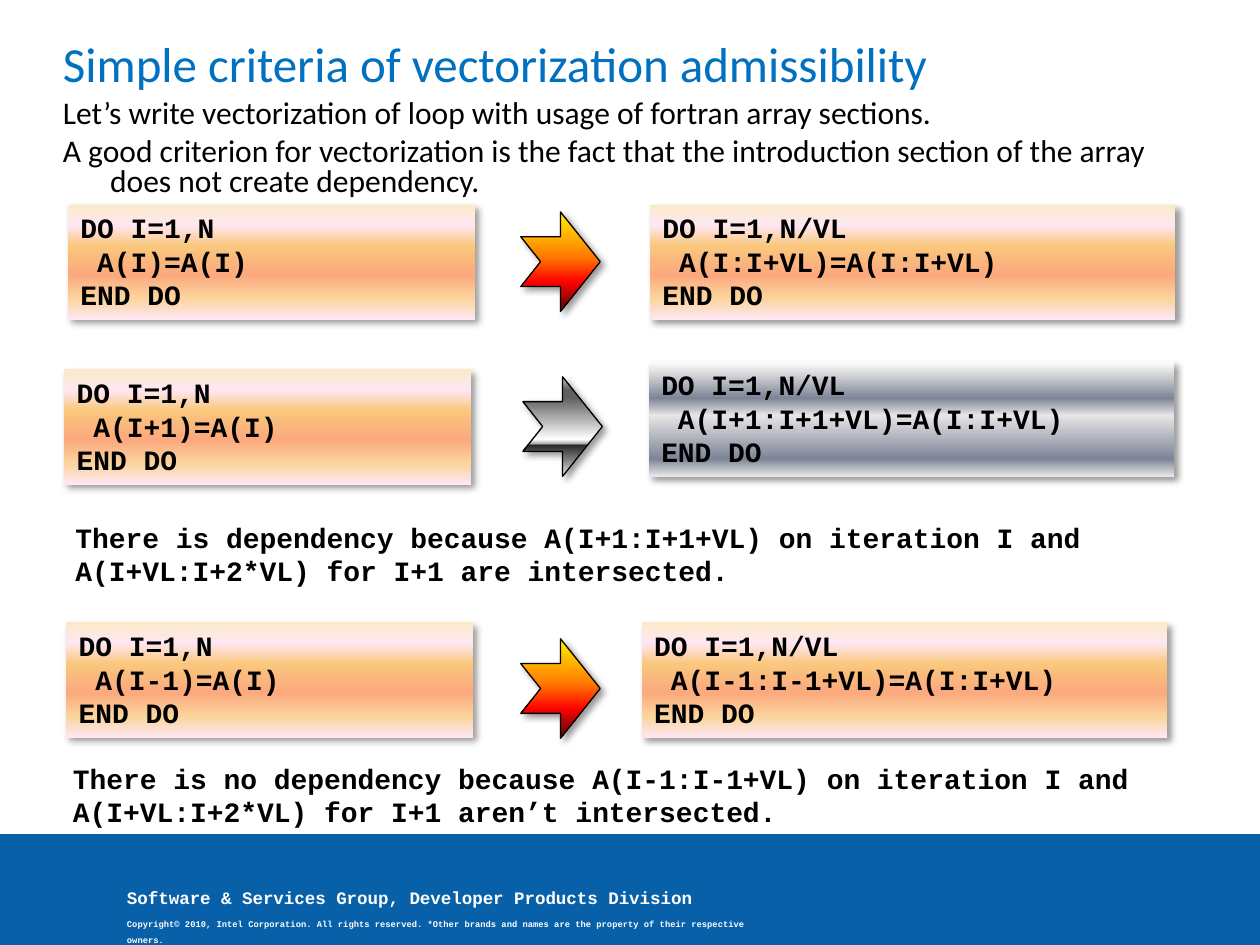
import pptx
import pptx.util
import pptx.dml.color
import pptx.enum.shapes
import pptx.enum.text
import pptx.oxml
import pptx.oxml.ns
import lxml.etree
from dataclasses import dataclass

Pt = pptx.util.Pt
RGBColor = pptx.dml.color.RGBColor
Shapes = pptx.enum.shapes.MSO_SHAPE


@dataclass(frozen=True)
class Theme:
    title_color: str = "0070C0"
    ink: str = "000000"
    light: str = "FFFFFF"
    band: str = "0860A8"
    sans: str = "Calibri"
    mono: str = "Courier New"
    title_size: int = 28
    body_size: int = 18
    code_size: int = 16
    code_leading: float = 19.2
    footer_size: int = 10
    copyright_size: int = 5
    peach: tuple = ((0, "FBEAC7"), (18, "FEE7F2"), (36, "FAC77D"),
                    (61, "FBA97D"), (82, "FBD49C"), (100, "FEE7F2"))
    fire: tuple = ((0, "FFF200"), (45, "FF7A00"), (70, "FF0300"), (100, "4D0808"))
    chrome: tuple = ((0, "CBCBCB"), (13, "5F5F5F"), (21, "5F5F5F"), (63, "FFFFFF"),
                     (67, "B2B2B2"), (69, "292929"), (82, "777777"), (100, "EAEAEA"))
    steel: tuple = ((0, "FFFFFF"), (7, "E6E6E6"), (32, "7D8496"),
                    (47, "E6E6E6"), (85, "7D8496"), (100, "E6E6E6"))


THEME = Theme()
SHADOW = (
    f'<a:outerShdw {pptx.oxml.ns.nsdecls("a")} blurRad="{Pt(4)}" dist="{Pt(3)}" '
    'dir="2700000" algn="tl" rotWithShape="0"><a:srgbClr val="000000">'
    '<a:alpha val="40000"/></a:srgbClr></a:outerShdw>'
)


def style(para, size, color, face, bold=False):
    para.font.size = Pt(size)
    para.font.name = face
    para.font.bold = bold
    para.font.color.rgb = RGBColor.from_string(color)


def add_shape(page, kind, box):
    shape = page.shapes.add_shape(kind, *map(Pt, box))
    shape.shadow.inherit = False
    shape.line.fill.background()
    return shape


def add_glossy_shape(page, kind, box, stops):
    shape = add_shape(page, kind, box)
    shape.fill.gradient()
    shape.fill.gradient_angle = 270
    properties = shape._element.spPr
    stop_list = properties.find(".//" + pptx.oxml.ns.qn("a:gsLst"))
    stop_list.clear()
    for position, color in stops:
        stop = lxml.etree.SubElement(stop_list, pptx.oxml.ns.qn("a:gs"), pos=str(position * 1000))
        lxml.etree.SubElement(stop, pptx.oxml.ns.qn("a:srgbClr"), val=color)
    properties.find(pptx.oxml.ns.qn("a:effectLst")).append(pptx.oxml.parse_xml(SHADOW))
    return shape


def write_code_text(frame, lines):
    frame.word_wrap = True
    frame.vertical_anchor = pptx.enum.text.MSO_ANCHOR.TOP
    for index, line in enumerate(lines):
        para = frame.paragraphs[0] if index == 0 else frame.add_paragraph()
        para.text = line
        para.alignment = pptx.enum.text.PP_ALIGN.LEFT
        para.line_spacing = Pt(THEME.code_leading)
        style(para, THEME.code_size, THEME.ink, THEME.mono, True)


def add_loop(page, box, stops, count, statement):
    shape = add_glossy_shape(page, Shapes.RECTANGLE, box, stops)
    write_code_text(shape.text_frame, [f"DO I=1,{count}", f" {statement}", "END DO"])


def add_arrow(page, box, stops):
    arrow = add_glossy_shape(page, Shapes.NOTCHED_RIGHT_ARROW, box, stops)
    arrow.line.color.rgb = RGBColor.from_string(THEME.ink)
    arrow.line.width = Pt(0.75)


def add_conversion(page, spots, scalar, vector, allowed=True):
    (left, top), (arrow_left, arrow_top), (right, right_top) = spots
    add_loop(page, (left, top, 232.6, 65.5), THEME.peach, "N", scalar)
    add_arrow(page, (arrow_left, arrow_top, 45.4, 56.9), THEME.fire if allowed else THEME.chrome)
    add_loop(page, (right, right_top, 300.2, 65.5),
             THEME.peach if allowed else THEME.steel, "N/VL", vector)


def add_verdict(page, box, text):
    write_code_text(page.shapes.add_textbox(*map(Pt, box)).text_frame, [text])


def add_heading(page, box, title, statements):
    frame = page.shapes.add_textbox(*map(Pt, box)).text_frame
    frame.word_wrap = True
    frame.margin_left = frame.margin_top = frame.margin_right = frame.margin_bottom = 0
    for index, text in enumerate([title, *statements]):
        para = frame.paragraphs[0] if index == 0 else frame.add_paragraph()
        para.text = text
        para.line_spacing = 0.8
        indents = para._p.get_or_add_pPr()
        indents.set("marL", str(Pt(27)))
        indents.set("indent", str(-Pt(27)))
        if index == 0:
            style(para, THEME.title_size, THEME.title_color, THEME.sans)
        else:
            para.space_before = Pt(4.5)
            style(para, THEME.body_size, THEME.ink, THEME.sans)


def add_footer(page, box, division, rights):
    left, top, width, height = box
    band = add_shape(page, Shapes.RECTANGLE, box)
    band.fill.solid()
    band.fill.fore_color.rgb = RGBColor.from_string(THEME.band)
    label = page.shapes.add_textbox(Pt(left + 65.5), Pt(top + 24.5), Pt(369.4), Pt(32.4))
    frame = label.text_frame
    frame.word_wrap = False
    first, second = frame.paragraphs[0], frame.add_paragraph()
    first.text, second.text = division, rights
    first.line_spacing, second.line_spacing = 1.2, 1.5
    second.space_before = Pt(3.1)
    style(first, THEME.footer_size, THEME.light, THEME.mono, True)
    style(second, THEME.copyright_size, THEME.light, THEME.mono, True)


def main():
    deck = pptx.Presentation()
    deck.slide_width, deck.slide_height = Pt(720), Pt(540)
    page = deck.slides.add_slide(deck.slide_layouts[6])
    add_footer(page, (0, 476.6, 720, 63.4),
               "Software & Services Group, Developer Products Division",
               "Copyright© 2010, Intel Corporation. All rights reserved. "
               "*Other brands and names are the property of their respective owners.")
    add_heading(page, (36, 25.9, 648, 85), "Simple criteria of vectorization admissibility", [
        "Let’s write vectorization of loop with usage of fortran array sections.",
        "A good criterion for vectorization is the fact that the introduction section "
        "of the array does not create dependency.",
    ])
    add_conversion(page, ((38.9, 116.9), (297.6, 121.1), (371.5, 116.9)),
                   "A(I)=A(I)", "A(I:I+VL)=A(I:I+VL)")
    add_conversion(page, ((36.7, 211.1), (298.8, 215.3), (370.8, 206.6)),
                   "A(I+1)=A(I)", "A(I+1:I+1+VL)=A(I:I+VL)", allowed=False)
    add_verdict(page, (36, 293.8, 635, 46.1),
                "There is dependency because A(I+1:I+1+VL) on iteration I and "
                "A(I+VL:I+2*VL) for I+1 are intersected.")
    add_conversion(page, ((37.9, 355.7), (297.6, 365), (366.7, 355.7)),
                   "A(I-1)=A(I)", "A(I-1:I-1+VL)=A(I:I+VL)")
    add_verdict(page, (34.6, 431.5, 635, 46.1),
                "There is no dependency because A(I-1:I-1+VL) on iteration I and "
                "A(I+VL:I+2*VL) for I+1 aren’t intersected.")
    deck.save("out.pptx")


if __name__ == "__main__":
    main()
